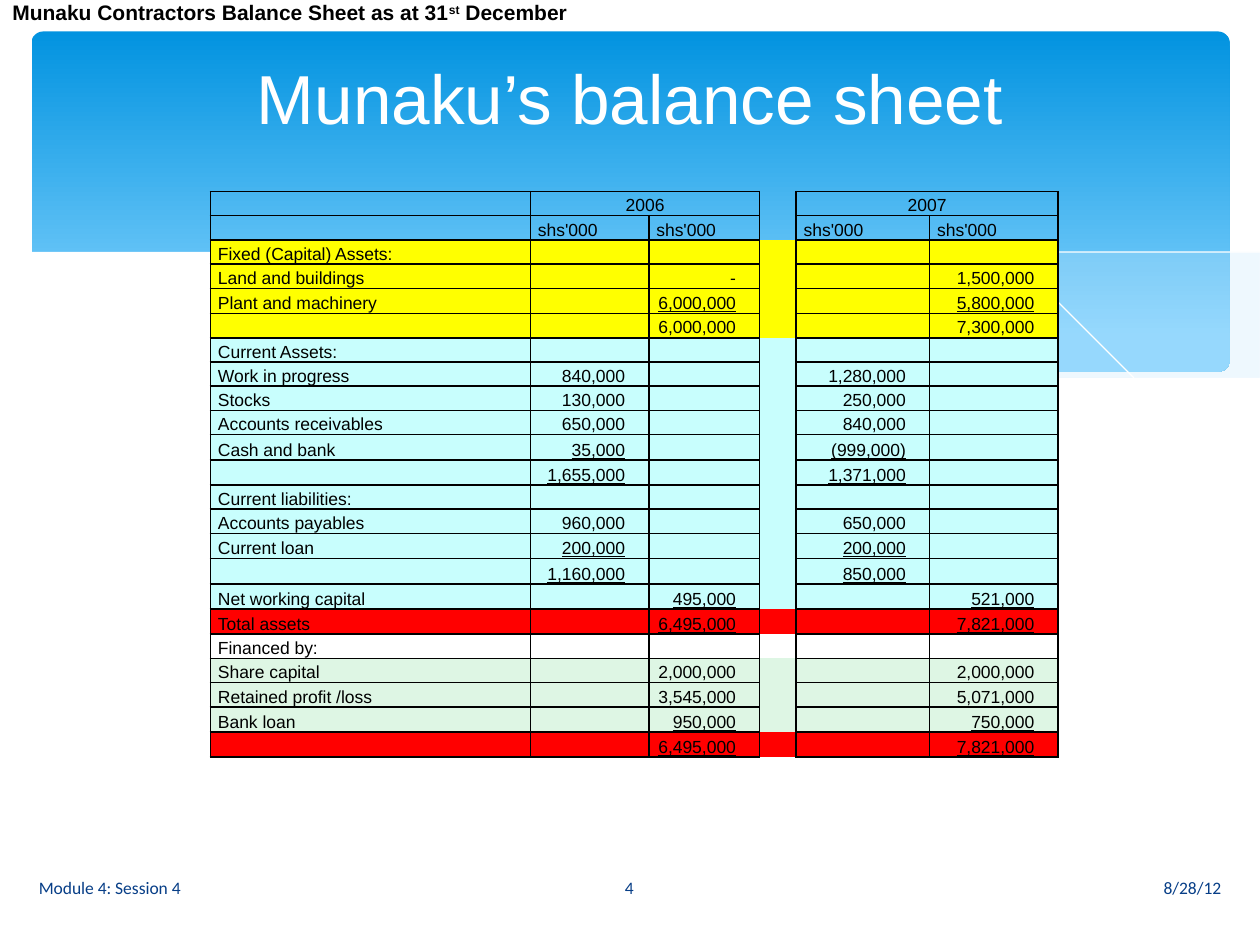
from lxml.etree import SubElement
from pptx import Presentation
from pptx.dml.color import RGBColor
from pptx.enum.shapes import MSO_SHAPE
from pptx.enum.text import MSO_ANCHOR, PP_ALIGN
from pptx.oxml.ns import qn
from pptx.util import Inches, Pt

LEFT, CENTER, RIGHT = PP_ALIGN.LEFT, PP_ALIGN.CENTER, PP_ALIGN.RIGHT
BLACK, WHITE, NAVY = "000000", "FFFFFF", "073E87"
YELLOW, AQUA, RED, MINT = "FFFF00", "C8FEFD", "FF0000", "DEF6E4"
GAP_COL = 3

# Wave outlines, in inches
RIGHT_SWELL = [(9.76, 2), (9.48, 2.04), (9.21, 2.1), (8.91, 2.16), (8.61, 2.23),
               (8.05, 2.37), (7.53, 2.48), (7.06, 2.57), (6.61, 2.65), (6.91, 2.69),
               (7.32, 2.74), (7.69, 2.77), (8.03, 2.78), (8.35, 2.77), (8.63, 2.75),
               (8.89, 2.72), (9.13, 2.67), (9.35, 2.62), (9.63, 2.52), (9.76, 2.47)]
LONG_SWELL = [(8.93, 2.73), (8.66, 2.69), (8.07, 2.6), (7.41, 2.47), (6.68, 2.31),
              (6.29, 2.22), (5.84, 2.11), (5.41, 2.03), (5.02, 1.96), (4.65, 1.91),
              (4.2, 1.87), (3.8, 1.85), (3.44, 1.86), (3.13, 1.88), (2.86, 1.91),
              (3.23, 1.96), (3.62, 2.03), (4.04, 2.11), (4.49, 2.22), (5.3, 2.4),
              (5.84, 2.52), (6.34, 2.61), (6.8, 2.68), (7.22, 2.74), (7.61, 2.77),
              (7.96, 2.78), (8.28, 2.78), (8.57, 2.77)]
FALLING_LINE = [(3.09, 1.95), (3.28, 1.92), (3.53, 1.89), (3.87, 1.87), (4.33, 1.87),
                (4.69, 1.89), (5.1, 1.92), (5.56, 1.97), (6.08, 2.04), (6.65, 2.13),
                (7.27, 2.26), (7.95, 2.41), (8.69, 2.61), (9.07, 2.72)]
RISING_LINE = [(6.13, 2.57), (6.53, 2.46), (6.95, 2.35), (7.48, 2.23), (8.06, 2.1),
               (8.66, 1.99), (8.95, 1.94), (9.24, 1.9), (9.51, 1.87), (9.75, 1.85)]
WHITE_WAVE = [(9.77, 2.46), (9.5, 2.56), (9.2, 2.65), (8.87, 2.71), (8.5, 2.75),
              (8.09, 2.77), (7.61, 2.75), (7.08, 2.7), (6.48, 2.62), (5.79, 2.5),
              (5.03, 2.33), (4.47, 2.2), (3.91, 2.07), (3.4, 1.97), (2.92, 1.9),
              (2.5, 1.86), (2.11, 1.84), (1.77, 1.84), (1.46, 1.85), (1.19, 1.87),
              (0.95, 1.91), (0.76, 1.95), (0.59, 1.99), (0.46, 2.03), (0.36, 2.07),
              (0.23, 2.13), (0.23, 3.29), (9.77, 3.29)]

# Balance sheet: fill, label, 2006 detail and total, 2007 detail and total.
# A leading underscore marks an underlined amount.
ROWS = [
    (None, "", "2006", "", "2007", ""),
    (None, "", "shs'000", "shs'000", "shs'000", "shs'000"),
    (YELLOW, "Fixed (Capital) Assets:", "", "", "", ""),
    (YELLOW, "Land and buildings", "", "-", "", "1,500,000"),
    (YELLOW, "Plant and machinery", "", "_6,000,000", "", "_5,800,000"),
    (YELLOW, "", "", "6,000,000", "", "7,300,000"),
    (AQUA, "Current Assets:", "", "", "", ""),
    (AQUA, "Work in progress", "840,000", "", "1,280,000", ""),
    (AQUA, "Stocks", "130,000", "", "250,000", ""),
    (AQUA, "Accounts receivables", "650,000", "", "840,000", ""),
    (AQUA, "Cash and bank", "_35,000", "", "_(999,000)", ""),
    (AQUA, "", "_1,655,000", "", "_1,371,000", ""),
    (AQUA, "Current liabilities:", "", "", "", ""),
    (AQUA, "Accounts payables", "960,000", "", "650,000", ""),
    (AQUA, "Current loan", "_200,000", "", "_200,000", ""),
    (AQUA, "", "_1,160,000", "", "_850,000", ""),
    (AQUA, "Net working capital", "", "_495,000", "", "_521,000"),
    (RED, "Total assets", "", "_6,495,000", "", "_7,821,000"),
    (None, "Financed by:", "", "", "", ""),
    (MINT, "Share capital", "", "2,000,000", "", "2,000,000"),
    (MINT, "Retained profit /loss", "", "3,545,000", "", "5,071,000"),
    (MINT, "Bank loan", "", "_950,000", "", "_750,000"),
    (RED, "", "", "_6,495,000", "", "_7,821,000"),
]
COL_WIDTHS = [2.54, 0.94, 0.88, 0.22, 1.06, 1.02]


def rgb(value):
    return RGBColor.from_string(value)


class SlideBuilder:
    def __init__(self, s, font="Arial"):
        self.s, self.font = s, font

    def run(self, p, text, size, color=BLACK, font=None, bold=False, underline=False):
        r = p.add_run()
        r.text = text
        f = r.font
        f.name, f.size, f.bold = font or self.font, Pt(size), bold
        f.underline = underline
        f.color.rgb = rgb(color)
        return r

    def title(self, text, x, y, w, h):
        sp = self.s.shapes.title
        sp.left, sp.top, sp.width, sp.height = map(Inches, (x, y, w, h))
        sp.element.getparent().append(sp.element)  # in front of the waves
        tf = sp.text_frame
        tf.vertical_anchor = MSO_ANCHOR.MIDDLE
        tf.paragraphs[0].alignment = CENTER
        self.run(tf.paragraphs[0], text, 39.6, WHITE)

    def text_box(self, x, y, w, h, align=LEFT, anchor=MSO_ANCHOR.MIDDLE):
        tf = self.s.shapes.add_textbox(*map(Inches, (x, y, w, h))).text_frame
        tf.word_wrap = True
        tf.vertical_anchor = anchor
        tf.margin_top = tf.margin_bottom = 0
        tf.paragraphs[0].alignment = align
        return tf.paragraphs[0]

    def gradient_panel(self, x, y, w, h, stops):
        sp = self.s.shapes.add_shape(MSO_SHAPE.ROUNDED_RECTANGLE,
                                     *map(Inches, (x, y, w, h)))
        sp.adjustments[0] = 0.034
        sp.shadow.inherit = False
        sp.line.fill.background()
        sp.fill.gradient()
        sp.fill.gradient_angle = 270
        for stop, (position, color) in zip(sp.fill.gradient_stops, stops):
            stop.position, stop.color.rgb = position, rgb(color)

    def wave(self, points, fill=None, alpha=100, line=None):
        builder = self.s.shapes.build_freeform(*points[0], scale=Inches(1))
        builder.add_line_segments(points[1:], close=fill is not None)
        sp = builder.convert_to_shape()
        sp.shadow.inherit = False
        if fill:
            sp.fill.solid()
            sp.fill.fore_color.rgb = rgb(fill)
            if alpha < 100:
                clr = sp.fill._xPr.find(".//" + qn("a:srgbClr"))
                SubElement(clr, qn("a:alpha"), val=str(alpha * 1000))
        else:
            sp.fill.background()
        if line:
            sp.line.color.rgb = rgb(line)
            sp.line.width = Pt(0)
        else:
            sp.line.fill.background()

    def borders(self, cell, sides):
        tcPr = cell._tc.get_or_add_tcPr()
        for side in "LRTB":
            ln = SubElement(tcPr, qn("a:ln" + side), w=str(Pt(1)))
            if side in sides:
                fill = SubElement(ln, qn("a:solidFill"))
                SubElement(fill, qn("a:srgbClr"), val=BLACK)
            else:
                SubElement(ln, qn("a:noFill"))

    def cell(self, cell, text, fill, align, sides):
        self.borders(cell, sides)
        if fill:
            cell.fill.solid()
            cell.fill.fore_color.rgb = rgb(fill)
        else:
            cell.fill.background()
        cell.vertical_anchor = MSO_ANCHOR.BOTTOM
        cell.margin_top = cell.margin_bottom = 0
        cell.margin_left = Inches(0.06)
        cell.margin_right = Inches(0.19 if align == RIGHT else 0.06)
        p = cell.text_frame.paragraphs[0]
        p.alignment, p.line_spacing = align, 1.15
        if text:
            self.run(p, text.lstrip("_"), 10, underline=text.startswith("_"))
        else:
            SubElement(p._p, qn("a:endParaRPr"), sz="1000")

    def balance_table(self, x, y, rows, widths):
        heights = [0.2 if any(t.startswith("_") for t in row[1:]) else 0.19
                   for row in rows]
        tbl = self.s.shapes.add_table(len(rows), len(widths), Inches(x), Inches(y),
                                      Inches(sum(widths)), Inches(sum(heights))).table
        tbl.first_row = tbl.horz_banding = False
        for col, width in zip(tbl.columns, widths):
            col.width = Inches(width)
        for i, (fill, *texts) in enumerate(rows):
            tbl.rows[i].height = Inches(heights[i])
            texts.insert(GAP_COL, "")
            for j, text in enumerate(texts):
                align = CENTER if i == 0 else LEFT if i == 1 or j == 0 else RIGHT
                sides = "LR" if j == GAP_COL else "LRTB"
                self.cell(tbl.cell(i, j), text, fill, align, sides)
        for j in (1, 4):  # each year heads two columns
            tbl.cell(0, j).merge(tbl.cell(0, j + 1))


def main():
    prs = Presentation()
    prs.slide_width, prs.slide_height = Inches(10), Inches(7.5)
    b = SlideBuilder(prs.slides.add_slide(prs.slide_layouts[5]))

    # Background panel and waves
    b.gradient_panel(0.25, 0.25, 9.51, 2.7, [(0, "0293E0"), (0.9, "83D3FE")])
    b.wave(RIGHT_SWELL, "C6E7FC", 29)
    b.wave(LONG_SWELL, "C6E7FC", 40)
    b.wave(FALLING_LINE, line=WHITE)
    b.wave(RISING_LINE, line=WHITE)
    b.wave(WHITE_WAVE, WHITE)

    # Title and footer
    b.title("Munaku’s balance sheet", 0.5, 0.37, 9, 0.8)
    for text, x, w, align in [("8/28/12", 5.65, 4.14, RIGHT),
                              ("Module 4: Session 4", 0.21, 4.14, LEFT),
                              ("4", 4.36, 1.27, CENTER)]:
        b.run(b.text_box(x, 6.84, w, 0.4, align), text, 10, NAVY, "Calibri")

    # Balance sheet and its heading
    b.balance_table(1.67, 1.52, ROWS, COL_WIDTHS)
    p = b.text_box(0, 0, 10, 0.5, anchor=MSO_ANCHOR.TOP)
    b.run(p, "Munaku Contractors Balance Sheet as at 31", 12, bold=True)
    r = b.run(p, "st", 12, bold=True)
    r.font._element.set("baseline", "30000")
    b.run(p, " December", 12, bold=True)

    prs.save("out.pptx")


if __name__ == "__main__":
    main()
